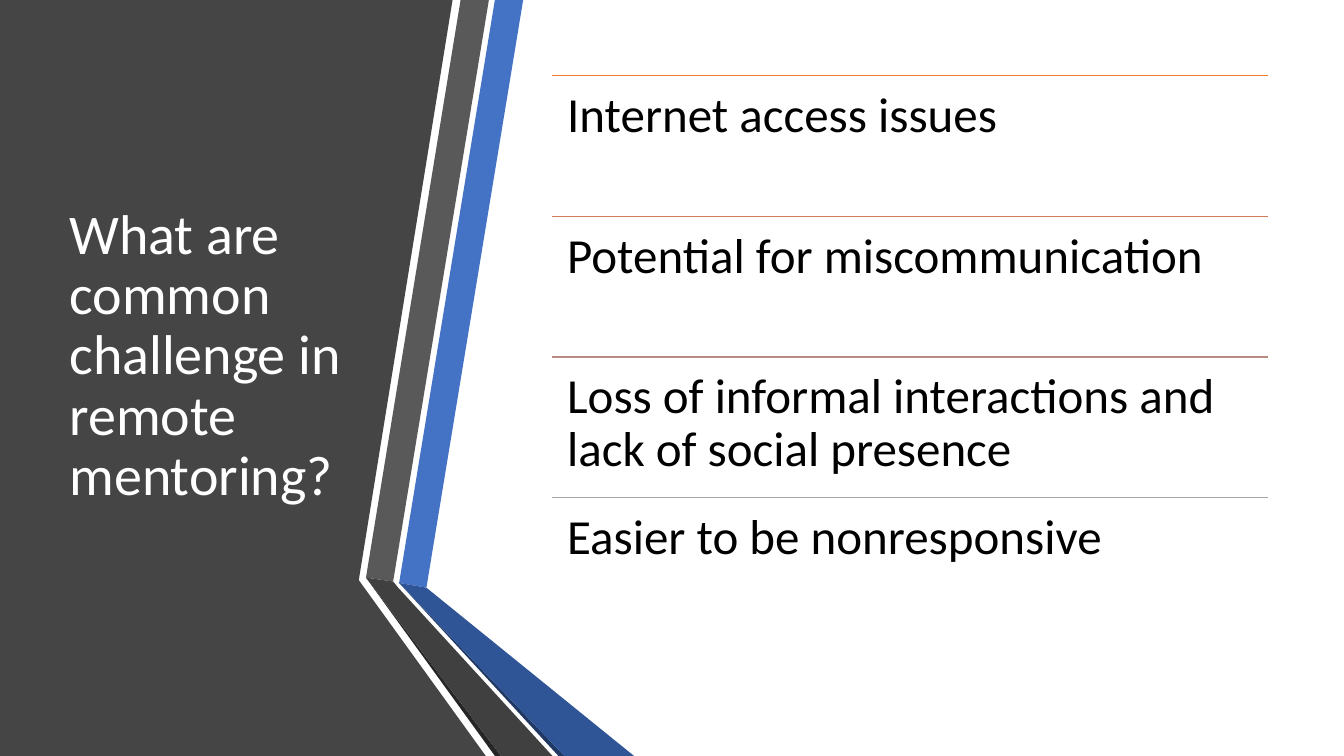
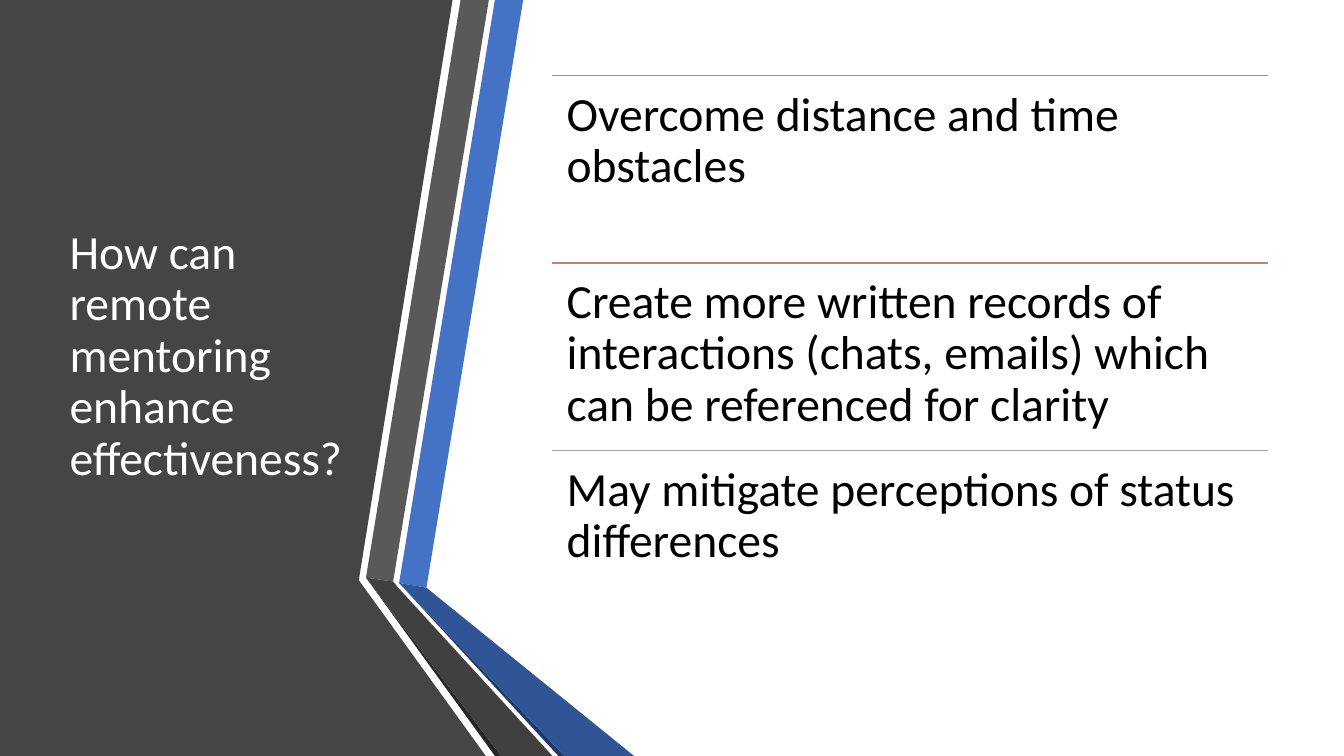
from dataclasses import dataclass

from lxml.etree import SubElement
from pptx import Presentation
from pptx.dml.color import RGBColor
from pptx.enum.shapes import MSO_CONNECTOR
from pptx.enum.text import MSO_ANCHOR, MSO_AUTO_SIZE, PP_ALIGN
from pptx.oxml.ns import qn
from pptx.slide import Slide
from pptx.text.text import TextFrame
from pptx.util import Pt

COLORS = {
    "panel": "454545",
    "blue": "4472C4",
    "gray": "595959",
    "gray_edge": "262626",
    "blue_edge": "203864",
    "blue_fold": "2F5597",
    "gray_fold": "404040",
    "title": "FFFFFF",
    "body": "000000",
    "orange": "ED7D31",
    "copper": "D17B5C",
    "clay": "C48170",
    "rose": "B98A82",
    "silver": "A5A5A5",
}
FONT = "Calibri"
WIDTH, HEIGHT = 960, 540
CONTENT_TOP, CONTENT_HEIGHT = 54, 401.8
TITLE_LEFT, TITLE_WIDTH = 42.5, 218.9
LIST_LEFT, LIST_WIDTH = 394.6, 511.2
TITLE_ONLY_LAYOUT = 5


@dataclass(frozen=True)
class Band:
    color: str
    points: tuple[tuple[float, float], ...]


@dataclass(frozen=True)
class Row:
    text: str
    rule_color: str


@dataclass(frozen=True)
class Page:
    title: str
    title_size: float
    row_size: float
    rows: tuple[Row, ...]


# Corners where the upright strips meet their folds
GRAY_LEFT, GRAY_RIGHT = (261.4, 412.6), (280.8, 415.4)
BLUE_LEFT, BLUE_RIGHT = (285.1, 416.4), (304.6, 419.8)

BANDS = (
    Band("panel", ((0, 0), (323.3, 0), (256.3, 414.4), (347, HEIGHT), (0, HEIGHT))),
    Band("blue", (BLUE_LEFT, BLUE_RIGHT, (373.7, 0), (353.5, 0))),
    Band("gray", (GRAY_LEFT, GRAY_RIGHT, (349.2, 0), (329, 0))),
    Band("gray_edge", (GRAY_LEFT, (353.5, HEIGHT), (357.8, HEIGHT))),
    Band("blue_edge", (BLUE_LEFT, (398.9, HEIGHT), (403.2, HEIGHT))),
    Band("blue_fold", (BLUE_LEFT, (403.2, HEIGHT), (452.9, HEIGHT), BLUE_RIGHT)),
    Band("gray_fold", (GRAY_LEFT, (357.8, HEIGHT), (394.6, HEIGHT),
                       (284.4, 419.8), GRAY_RIGHT)),
)

PAGES = (
    Page("What are common challenge in remote mentoring?", 40, 35, (
        Row("Internet access issues", "orange"),
        Row("Potential for miscommunication", "copper"),
        Row("Loss of informal interactions and lack of social presence", "rose"),
        Row("Easier to be nonresponsive", "silver"),
    )),
    Page("How can remote mentoring enhance effectiveness?", 34, 34, (
        Row("Overcome distance and time obstacles", "orange"),
        Row("Create more written records of interactions (chats, emails) "
            "which can be referenced for clarity", "clay"),
        Row("May mitigate perceptions of status differences", "silver"),
    )),
)


def set_attributes(target: object, values: dict[str, object]) -> None:
    for name, value in values.items():
        setattr(target, name, value)


def rgb(color: str) -> RGBColor:
    return RGBColor.from_string(COLORS[color])


def write_text(frame: TextFrame, text: str, size: float, color: str,
               anchor: MSO_ANCHOR) -> None:
    set_attributes(frame, {
        "text": text,
        "word_wrap": True,
        "auto_size": MSO_AUTO_SIZE.NONE,
        "vertical_anchor": anchor,
    })
    paragraph = frame.paragraphs[0]
    set_attributes(paragraph, {"alignment": PP_ALIGN.LEFT, "line_spacing": 0.9})
    font = paragraph.runs[0].font
    set_attributes(font, {"name": FONT, "size": Pt(size)})
    font.color.rgb = rgb(color)


def draw_band(slide: Slide, band: Band) -> None:
    start, *others = [(Pt(x), Pt(y)) for x, y in band.points]
    builder = slide.shapes.build_freeform(*start)
    builder.add_line_segments(others, close=True)
    shape = builder.convert_to_shape()
    shape.shadow.inherit = False
    shape.fill.solid()
    shape.fill.fore_color.rgb = rgb(band.color)
    shape.line.fill.background()


def draw_title(slide: Slide, page: Page) -> None:
    title = slide.shapes.title
    set_attributes(title, {
        "left": Pt(TITLE_LEFT),
        "top": Pt(CONTENT_TOP),
        "width": Pt(TITLE_WIDTH),
        "height": Pt(CONTENT_HEIGHT),
    })
    write_text(title.text_frame, page.title, page.title_size, "title",
               MSO_ANCHOR.MIDDLE)
    # Bring the placeholder in front of the panel
    slide.shapes.element.append(title.element)


def draw_rule(slide: Slide, top: float, color: str) -> None:
    rule = slide.shapes.add_connector(
        MSO_CONNECTOR.STRAIGHT,
        Pt(LIST_LEFT), Pt(top), Pt(LIST_LEFT + LIST_WIDTH), Pt(top))
    rule.line.width = Pt(1)
    rule.line.color.rgb = rgb(color)
    SubElement(rule.element.spPr, qn("a:effectLst"))


def draw_rows(slide: Slide, page: Page) -> None:
    row_height = CONTENT_HEIGHT / len(page.rows)
    inset = Pt(0.3 * page.row_size)
    sides = ("left", "top", "right", "bottom")
    for index, row in enumerate(page.rows):
        top = CONTENT_TOP + index * row_height
        draw_rule(slide, top, row.rule_color)
        box = slide.shapes.add_textbox(
            Pt(LIST_LEFT), Pt(top), Pt(LIST_WIDTH), Pt(row_height))
        set_attributes(box.text_frame, {f"margin_{side}": inset for side in sides})
        write_text(box.text_frame, row.text, page.row_size, "body", MSO_ANCHOR.TOP)


def main() -> None:
    presentation = Presentation()
    set_attributes(presentation, {"slide_width": Pt(WIDTH), "slide_height": Pt(HEIGHT)})
    layout = presentation.slide_layouts[TITLE_ONLY_LAYOUT]
    for page in PAGES:
        slide = presentation.slides.add_slide(layout)
        for band in BANDS:
            draw_band(slide, band)
        draw_title(slide, page)
        draw_rows(slide, page)
    presentation.save("out.pptx")


if __name__ == "__main__":
    main()
